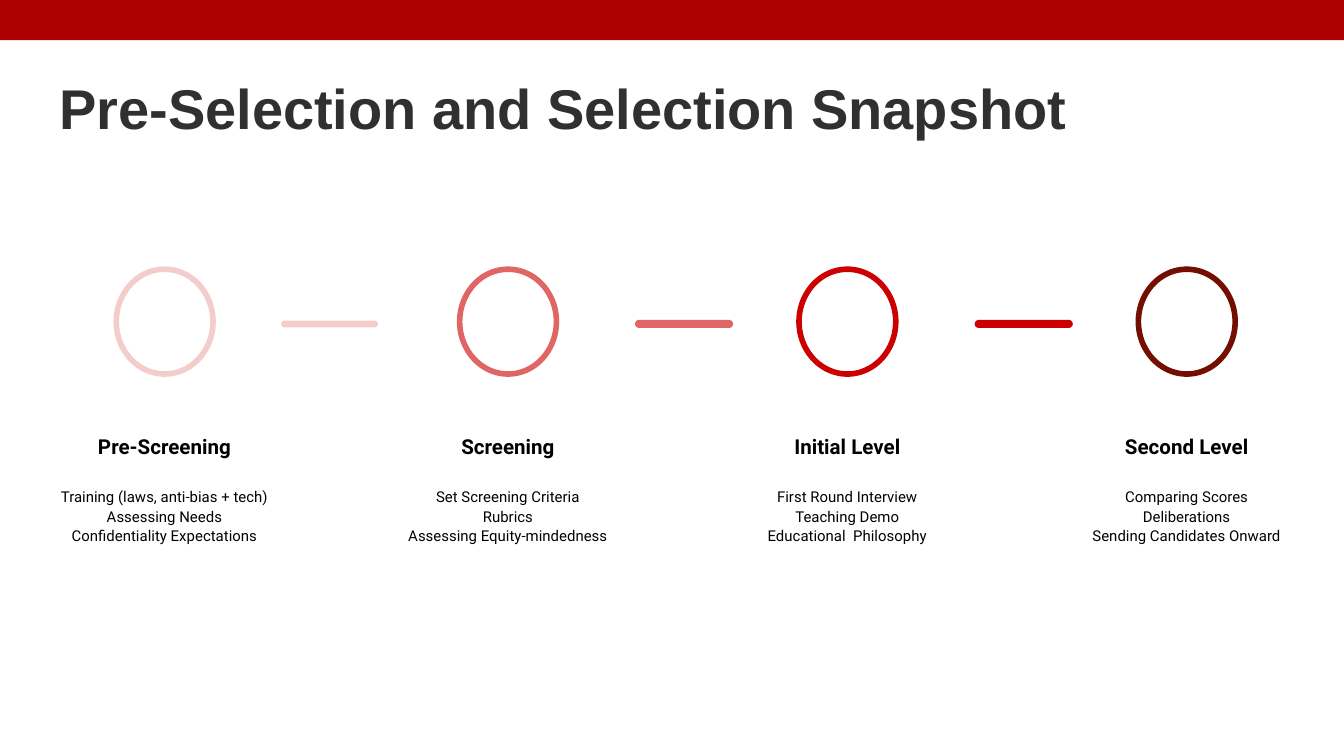
from dataclasses import dataclass
from typing import Optional

import pptx
import pptx.dml.color
import pptx.enum.shapes
import pptx.enum.text
import pptx.util

RGBColor = pptx.dml.color.RGBColor
Shape = pptx.enum.shapes.MSO_SHAPE
Anchor = pptx.enum.text.MSO_ANCHOR
Align = pptx.enum.text.PP_ALIGN

BANNER_RED = RGBColor(0xAD, 0x01, 0x01)
TITLE_GRAY = RGBColor(0x30, 0x30, 0x30)
BLACK = RGBColor(0x00, 0x00, 0x00)
PALE_RED = RGBColor(0xF4, 0xCC, 0xCC)
SOFT_RED = RGBColor(0xE0, 0x66, 0x66)
BRIGHT_RED = RGBColor(0xCC, 0x00, 0x00)
DARK_RED = RGBColor(0x73, 0x0E, 0x00)

# Square grid on a 16:9 slide: 100 cells wide and 56.25 cells high
SLIDE_WIDTH = pptx.util.Inches(10)
SLIDE_HEIGHT = SLIDE_WIDTH * 9 // 16
CELL = SLIDE_WIDTH / 100


@dataclass(frozen=True)
class Box:
    """A rectangle in grid columns and rows."""
    column: float
    row: float
    columns: float
    rows: float

    def lengths(self) -> list[int]:
        return [round(cells * CELL)
                for cells in (self.column, self.row, self.columns, self.rows)]


@dataclass(frozen=True)
class TextStyle:
    font: str
    size: float
    color: RGBColor
    bold: bool = False
    align: Align = Align.CENTER
    anchor: Anchor = Anchor.TOP
    line_spacing: float = 1.0
    gap: float = 0
    inset: float = 0.1


@dataclass(frozen=True)
class Stage:
    center: float
    color: RGBColor
    heading: str
    steps: tuple[str, ...]
    bar_column: Optional[float] = None
    bar_line: float = 0


TITLE = TextStyle("Arial", 30, TITLE_GRAY, True, Align.LEFT, Anchor.MIDDLE, inset=0.05)
HEADING = TextStyle("Roboto", 11, BLACK, True, anchor=Anchor.BOTTOM, line_spacing=1.15)
STEPS = TextStyle("Roboto", 8, BLACK, gap=1)

STAGES = (
    Stage(12.25, PALE_RED, "Pre-Screening",
          ("Training (laws, anti-bias + tech)", "Assessing Needs",
           "Confidentiality Expectations"), 20.92),
    Stage(37.8, SOFT_RED, "Screening",
          ("Set Screening Criteria", "Rubrics", "Assessing Equity-mindedness"),
          47.3, 0.75),
    Stage(63.05, BRIGHT_RED, "Initial Level",
          ("First Round Interview", "Teaching Demo", "Educational  Philosophy"),
          72.57, 0.75),
    Stage(88.3, DARK_RED, "Second Level",
          ("Comparing Scores", "Deliberations", "Sending Candidates Onward")),
)


def add_figure(slide: pptx.slide.Slide, kind: Shape, box: Box,
               fill: Optional[RGBColor] = None, line: Optional[RGBColor] = None,
               line_width: float = 0) -> pptx.shapes.autoshape.Shape:
    shape = slide.shapes.add_shape(kind, *box.lengths())
    shape.shadow.inherit = False
    if fill is None:
        shape.fill.background()
    else:
        shape.fill.solid()
        shape.fill.fore_color.rgb = fill
    if line is None or not line_width:
        shape.line.fill.background()
    else:
        shape.line.color.rgb = line
        shape.line.width = pptx.util.Pt(line_width)
    return shape


def add_text(slide: pptx.slide.Slide, box: Box, lines: tuple[str, ...],
             style: TextStyle) -> None:
    frame = slide.shapes.add_textbox(*box.lengths()).text_frame
    frame.word_wrap = True
    frame.vertical_anchor = style.anchor
    frame.margin_left = frame.margin_right = pptx.util.Inches(0.1)
    frame.margin_top = frame.margin_bottom = pptx.util.Inches(style.inset)
    for index, line in enumerate(lines):
        paragraph = frame.add_paragraph() if index else frame.paragraphs[0]
        paragraph.alignment = style.align
        paragraph.line_spacing = style.line_spacing
        paragraph.space_before = pptx.util.Pt(style.gap if index else 0)
        run = paragraph.add_run()
        run.text = line
        run.font.name = style.font
        run.font.size = pptx.util.Pt(style.size)
        run.font.bold = style.bold
        run.font.color.rgb = style.color


def add_stage(slide: pptx.slide.Slide, stage: Stage) -> None:
    # Ring
    add_figure(slide, Shape.OVAL, Box(stage.center - 3.6, 20.03, 7.2, 7.8),
               line=stage.color, line_width=3)
    # Heading and steps
    left, width = stage.center - 10.65, 21.3
    add_text(slide, Box(left, 29.25, width, 5.9), (stage.heading,), HEADING)
    add_text(slide, Box(left, 35.27, width, 9.7), stage.steps, STEPS)
    # Bar leading to the next stage
    if stage.bar_column is not None:
        bar = add_figure(slide, Shape.ROUNDED_RECTANGLE,
                         Box(stage.bar_column, 23.85, 7.2, 0.5),
                         stage.color, stage.color, stage.bar_line)
        bar.adjustments[0] = 0.5


def main() -> None:
    presentation = pptx.Presentation()
    presentation.slide_width = SLIDE_WIDTH
    presentation.slide_height = SLIDE_HEIGHT
    slide = presentation.slides.add_slide(presentation.slide_layouts[6])

    # Banner and title
    add_figure(slide, Shape.RECTANGLE, Box(0, 0, 100, 3), BANNER_RED)
    add_text(slide, Box(3.43, 4.85, 93.2, 6.3),
             ("Pre-Selection and Selection Snapshot",), TITLE)

    # Process from left to right
    for stage in STAGES:
        add_stage(slide, stage)

    presentation.save("out.pptx")


if __name__ == "__main__":
    main()
